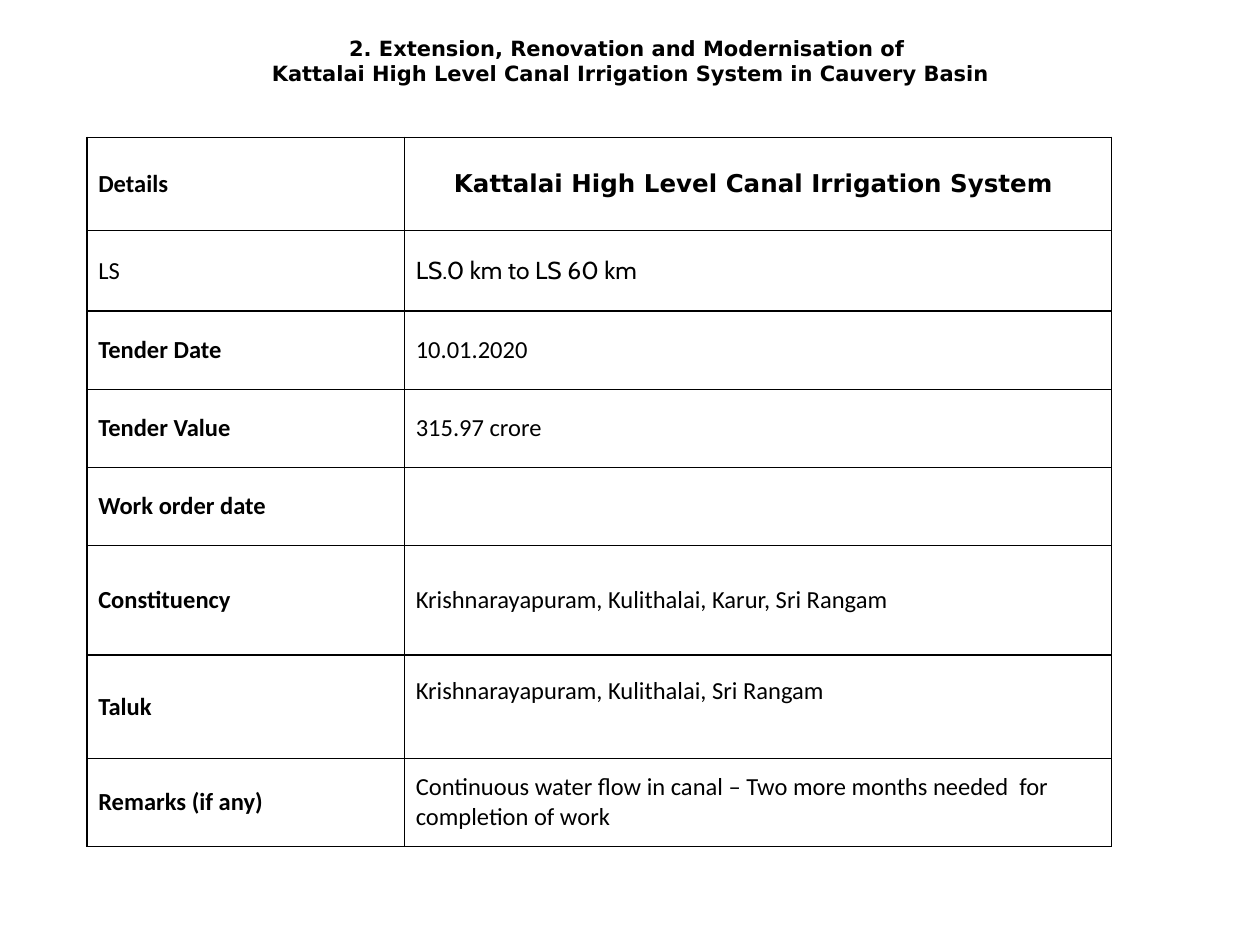
from lxml import etree
from pptx import Presentation
from pptx import util as u
from pptx.dml.color import RGBColor
from pptx.enum import text as t
from pptx.oxml.ns import qn

# Content
TITLE = ("2. Extension, Renovation and Modernisation of \v"
         "Kattalai High Level Canal Irrigation System in Cauvery Basin")
PLACES = "Krishnarayapuram, Kulithalai, "
BOLD = {"bold": True}
HEAD = {"bold": True, "face": "DejaVu Sans", "align": t.PP_ALIGN.CENTER}
# Each row: height, label, label format, value, value format
ROWS = [
    (0.74, "Details", BOLD, "Kattalai High Level Canal Irrigation System ", HEAD),
    (0.64, "LS", {}, "LS.0 km to LS 60 km", {"face": "Cabin"}),
    (0.62, "Tender Date", BOLD, "10.01.2020", {}),
    (0.62, "Tender Value", BOLD, "315.97 crore", {}),
    (0.62, "Work order date", BOLD, "", {}),
    (0.87, "Constituency", BOLD, PLACES + "Karur, Sri Rangam", {}),
    (0.82, "Taluk", BOLD, PLACES + "Sri Rangam", {"lift": 0.24}),
    (0.7, "Remarks (if any)", BOLD,
     "Continuous water flow in canal – Two more months needed  for completion of work", {}),
]
COLS = [2.52, 5.61]
COLORS = {"ink": "000000", "paper": "FFFFFF"}


def color(name):
    return RGBColor.from_string(COLORS[name])


def write(frame, words, size=14, face="Calibri", bold=False, align=t.PP_ALIGN.LEFT):
    para = frame.paragraphs[0]
    para.text = words
    para.alignment = align
    for run in para.runs:
        font = run.font
        font.size, font.name, font.bold = u.Pt(size), face, bold
        font.color.rgb = color("ink")


def border(cell, width=1):
    props = cell._tc.get_or_add_tcPr()
    for i, side in enumerate(("lnL", "lnR", "lnT", "lnB")):
        line = etree.Element(qn("a:" + side), w=str(u.Pt(width)))
        fill = etree.SubElement(line, qn("a:solidFill"))
        etree.SubElement(fill, qn("a:srgbClr"), val=COLORS["ink"])
        props.insert(i, line)


def fill_cell(cell, words, lift=0, **form):
    cell.fill.solid()
    cell.fill.fore_color.rgb = color("paper")
    border(cell)
    cell.vertical_anchor = t.MSO_ANCHOR.MIDDLE
    cell.margin_left = cell.margin_right = u.Inches(0.09)
    cell.margin_top = u.Inches(0.05)
    cell.margin_bottom = u.Inches(0.05 + lift)
    write(cell.text_frame, words, **form)


deck = Presentation()
deck.slide_width, deck.slide_height = u.Inches(10), u.Inches(7.5)
slide = deck.slides.add_slide(deck.slide_layouts[5])

# Title
title = slide.shapes.title
title.left, title.top = u.Inches(0.23), u.Inches(0.23)
title.width, title.height = u.Inches(9.55), u.Inches(0.5)
frame = title.text_frame
frame.word_wrap = True
frame.auto_size = t.MSO_AUTO_SIZE.NONE
frame.vertical_anchor = t.MSO_ANCHOR.TOP
write(frame, TITLE, size=12, **HEAD)

# Details table
high = sum(row[0] for row in ROWS)
table = slide.shapes.add_table(
    len(ROWS), len(COLS), u.Inches(0.69), u.Inches(1.09),
    u.Inches(sum(COLS)), u.Inches(high)).table
for col, wide in zip(table.columns, COLS):
    col.width = u.Inches(wide)
for i, (tall, label, label_form, value, value_form) in enumerate(ROWS):
    table.rows[i].height = u.Inches(tall)
    fill_cell(table.cell(i, 0), label, **label_form)
    fill_cell(table.cell(i, 1), value, **value_form)

deck.save("out.pptx")
